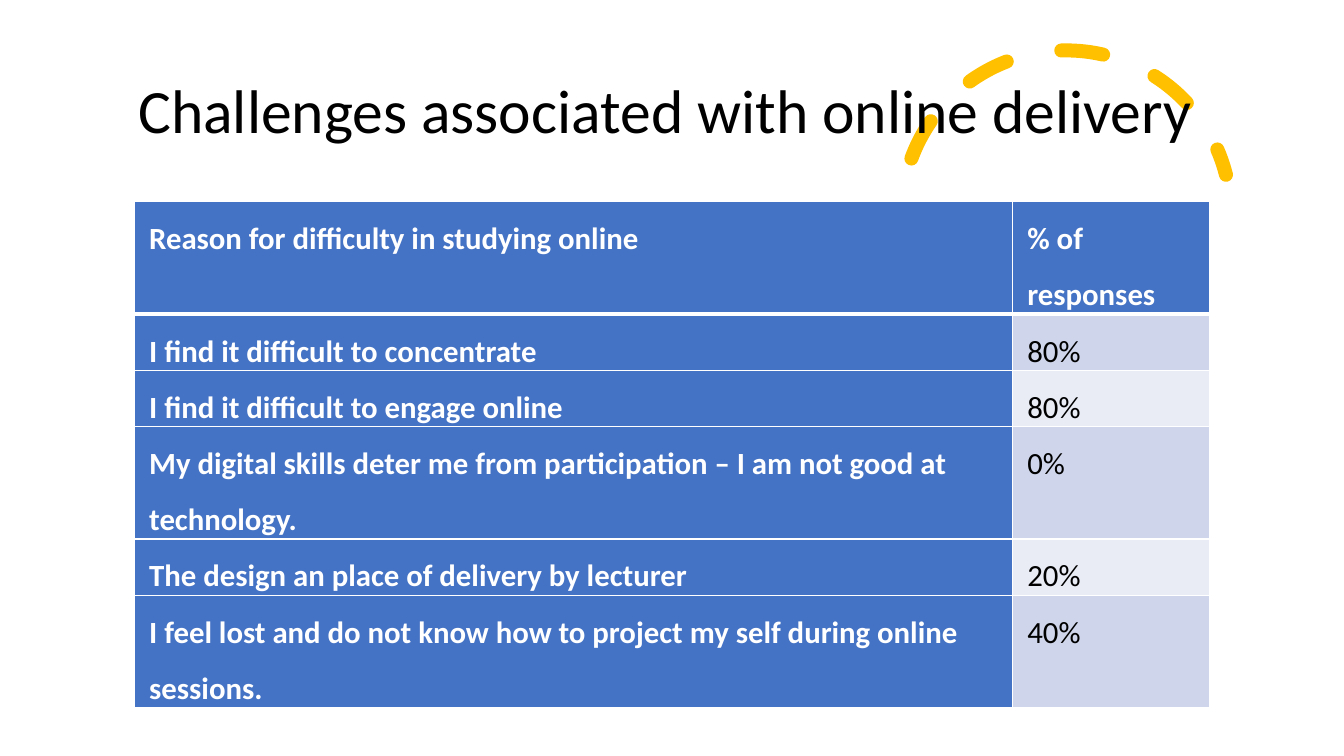
from lxml.etree import SubElement as Sub
from pptx import Presentation
from pptx.dml.color import RGBColor
from pptx.enum.dml import MSO_LINE
from pptx.enum.shapes import MSO_SHAPE as Shape
from pptx.enum.text import MSO_ANCHOR as Anchor, PP_ALIGN as Align
from pptx.oxml.ns import qn
from pptx.util import Inches, Pt

BLUE, WHITE, BLACK, GOLD = "4472C4", "FFFFFF", "000000", "FFC000"
BANDS = ["CFD5EA", "E9EBF5"]
COLS = [8.71, 1.96]
ROWS = [
    (1.06, "Reason for difficulty in studying online", "% of responses"),
    (0.52, "I find it difficult to concentrate", "80%"),
    (0.52, "I find it difficult to engage online", "80%"),
    (1.06, "My digital skills deter me from participation – "
           "I am not good at technology.", "0%"),
    (0.52, "The design an place of delivery by lecturer", "20%"),
    (1.06, "I feel lost and do not know how to project my self "
           "during online sessions.", "40%"),
]


def color(hex):
    return RGBColor.from_string(hex)


def box(*sides):
    return [Inches(side) for side in sides]


def add_run(para, text, size, hex, bold=False):
    run = para.add_run()
    run.text = text
    font = run.font
    font.name, font.size, font.bold = "Calibri", Pt(size), bold
    font.color.rgb = color(hex)


def set_title(slide, text):
    title = slide.shapes.title
    title.left, title.top, title.width, title.height = box(0.92, 0.4, 11.5, 1.45)
    frame = title.text_frame
    frame.word_wrap = True
    frame.vertical_anchor = Anchor.MIDDLE
    para = frame.paragraphs[0]
    para.alignment, para.line_spacing = Align.CENTER, 0.9
    add_run(para, text, 44, BLACK)


def add_arc(slide):
    """Put the dashed arc behind everything else."""
    arc = slide.shapes.add_shape(Shape.ARC, *box(8.94, 0.5, 3.27, 3.27))
    arc.rotation = 345.8
    # Angles are stored in 60000ths of a degree, adjustments in 100000ths.
    arc.adjustments[0] = 146.13 * 0.6
    arc.adjustments[1] = 0
    arc.shadow.inherit = False
    arc.fill.background()
    arc.line.color.rgb = color(GOLD)
    arc.line.width = Pt(10)
    arc.line.dash_style = MSO_LINE.DASH
    arc.element.spPr.find(qn("a:ln")).set("cap", "rnd")
    slide.shapes.element.insert(2, arc.element)


def add_edge(cell, side, width):
    props = cell._tc.get_or_add_tcPr()
    edge = Sub(props, qn("a:ln" + side), w=str(Pt(width)))
    fill = Sub(edge, qn("a:solidFill"))
    Sub(fill, qn("a:srgbClr"), val=WHITE)


def set_cell(cell, text, row, col):
    head = row == 0
    strong = head or col == 0
    cell.margin_left = cell.margin_right = Inches(0.15)
    cell.margin_top = cell.margin_bottom = 0
    for side in "LRTB":
        thick = (head and side == "B") or (row == 1 and side == "T")
        add_edge(cell, side, 3 if thick else 1)
    cell.fill.solid()
    cell.fill.fore_color.rgb = color(BLUE if strong else BANDS[(row - 1) % 2])
    para = cell.text_frame.paragraphs[0]
    para.line_spacing, para.space_after = 1.5, Pt(8)
    add_run(para, text, 22, WHITE if strong else BLACK, strong)


def add_grid(slide):
    place = box(1.33, 2, sum(COLS), sum(row[0] for row in ROWS))
    table = slide.shapes.add_table(len(ROWS), len(COLS), *place).table
    for col, width in enumerate(COLS):
        table.columns[col].width = Inches(width)
    for row, (height, *texts) in enumerate(ROWS):
        table.rows[row].height = Inches(height)
        for col, text in enumerate(texts):
            set_cell(table.cell(row, col), text, row, col)


def main():
    deck = Presentation()
    deck.slide_width, deck.slide_height = box(13.33, 7.5)
    slide = deck.slides.add_slide(deck.slide_layouts[5])
    set_title(slide, "Challenges associated with online delivery ")
    add_arc(slide)
    add_grid(slide)
    deck.save("out.pptx")


if __name__ == "__main__":
    main()
